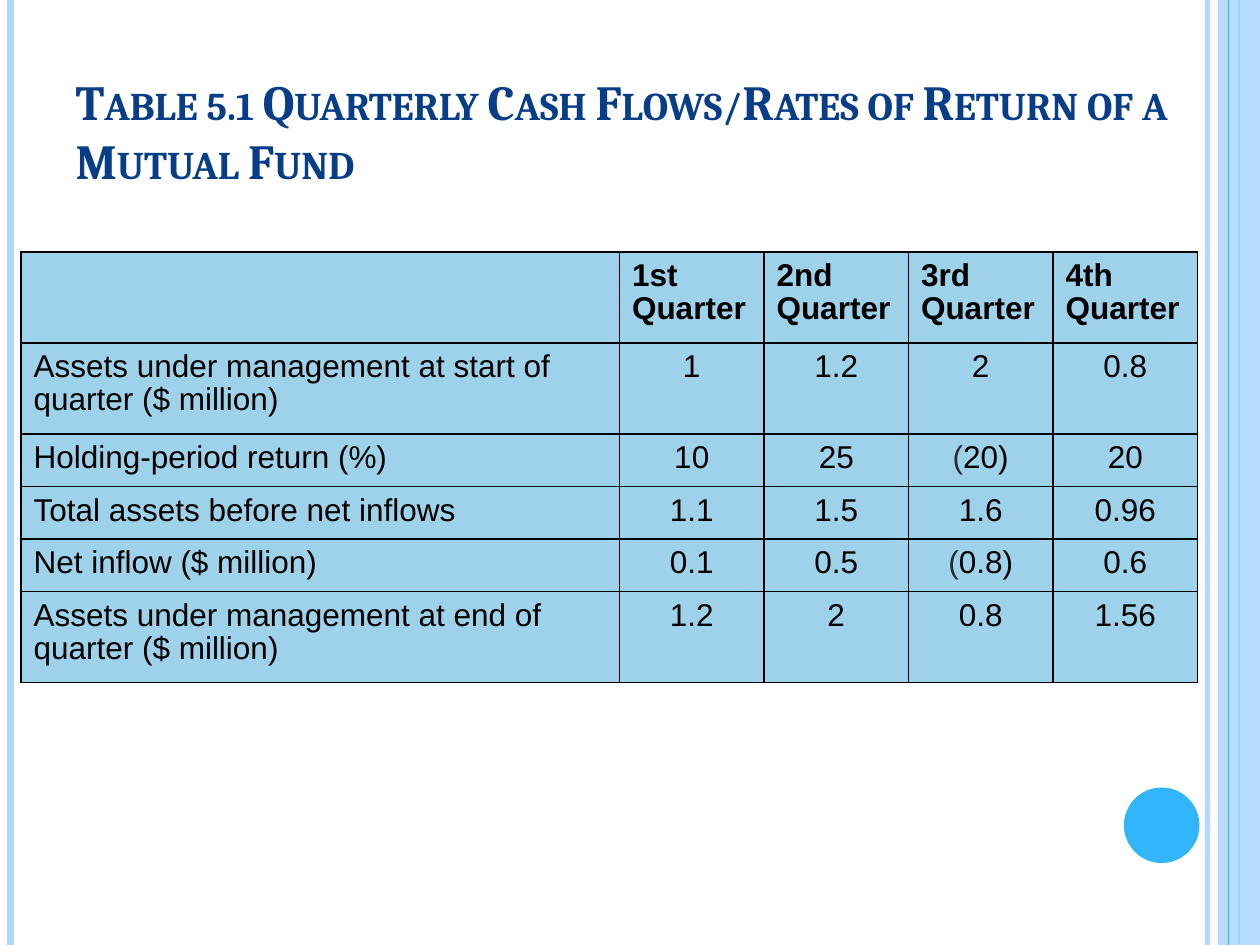
from lxml.etree import SubElement
from pptx import Presentation
from pptx.dml.color import RGBColor
from pptx.enum.shapes import MSO_CONNECTOR, MSO_SHAPE
from pptx.enum.text import MSO_ANCHOR, PP_ALIGN
from pptx.oxml.ns import qn
from pptx.util import Pt

COLORS = {
    "pale": "AED7FE",
    "accent": "31B6FD",
    "title": "073E87",
    "cell": "9ED1EA",
    "ink": "000000",
    "bracket": "292934",
}
SLIDE_WIDTH, SLIDE_HEIGHT = 720, 540

TITLE = "Table 5.1 Quarterly Cash Flows/Rates of Return of a Mutual Fund"
ROWS = [
    ["", "1st Quarter", "2nd Quarter", "3rd Quarter", "4th Quarter"],
    ["Assets under management at start of quarter ($ million)", "1", "1.2", "2", "0.8"],
    ["Holding-period return (%)", "10", "25", "(20)", "20"],
    ["Total assets before net inflows", "1.1", "1.5", "1.6", "0.96"],
    ["Net inflow ($ million)", "0.1", "0.5", "(0.8)", "0.6"],
    ["Assets under management at end of quarter ($ million)", "1.2", "2", "0.8", "1.56"],
]
COLUMN_WIDTHS = [342] + [82.6] * 4
TALL, SHORT = 52, 30
ROW_HEIGHTS = [TALL, TALL, SHORT, SHORT, SHORT, TALL]


def rgb(name):
    return RGBColor.from_string(COLORS[name])


def set_alpha(fill_parent, percent):
    color = fill_parent.find(".//" + qn("a:srgbClr"))
    SubElement(color, qn("a:alpha"), val=str(percent * 1000))


def add_stripe(slide, x, width, color, alpha=100):
    """Draw a vertical line over the full slide height."""
    stripe = slide.shapes.add_connector(
        MSO_CONNECTOR.STRAIGHT, Pt(x), Pt(0), Pt(x), Pt(SLIDE_HEIGHT))
    stripe.line.color.rgb = rgb(color)
    stripe.line.width = Pt(width)
    properties = stripe._element.spPr
    SubElement(properties, qn("a:effectLst"))
    if alpha < 100:
        set_alpha(properties, alpha)


def add_plain_shape(slide, kind, left, top, width, height, color, alpha=100):
    shape = slide.shapes.add_shape(kind, Pt(left), Pt(top), Pt(width), Pt(height))
    shape.shadow.inherit = False
    shape.fill.solid()
    shape.fill.fore_color.rgb = rgb(color)
    shape.line.fill.background()
    if alpha < 100:
        set_alpha(shape._element.spPr, alpha)


def format_font(font, name, size, color, bold):
    font.name = name
    font.size = Pt(size)
    font.color.rgb = rgb(color)
    font.bold = bold


def fill_title(slide):
    title = slide.shapes.title
    title.left, title.top, title.width, title.height = Pt(36), Pt(21.6), Pt(684), Pt(90)
    frame = title.text_frame
    frame.text = TITLE
    frame.word_wrap = True
    frame.vertical_anchor = MSO_ANCHOR.BOTTOM
    heading = frame.paragraphs[0]
    heading.alignment = PP_ALIGN.LEFT
    format_font(heading.font, "Cambria", 28, "title", True)
    heading._p.pPr.find(qn("a:defRPr")).set("cap", "small")


def add_borders(cell):
    properties = cell._tc.get_or_add_tcPr()
    for side in ("lnL", "lnR", "lnT", "lnB"):
        border = SubElement(properties, qn(f"a:{side}"), w=str(Pt(1)))
        fill = SubElement(border, qn("a:solidFill"))
        SubElement(fill, qn("a:srgbClr"), val=COLORS["ink"])


def fill_cell(cell, text, is_header, is_value):
    add_borders(cell)
    cell.fill.solid()
    cell.fill.fore_color.rgb = rgb("cell")
    cell.margin_left = cell.margin_right = Pt(7.2)
    cell.margin_top, cell.margin_bottom = Pt(5), Pt(3.6)
    entry = cell.text_frame.paragraphs[0]
    entry.line_spacing = 0.93
    entry.alignment = PP_ALIGN.CENTER if is_value else PP_ALIGN.LEFT
    format_font(entry.font, "Arial", 18, "ink", is_header)
    if text.startswith("("):
        bracket = entry.add_run()
        bracket.text = "("
        bracket.font.color.rgb = rgb("bracket")
        text = text[1:]
    if text:
        entry.add_run().text = text


def add_cash_flow_table(slide):
    table = slide.shapes.add_table(
        len(ROWS), len(COLUMN_WIDTHS), Pt(12), Pt(144),
        Pt(sum(COLUMN_WIDTHS)), Pt(sum(ROW_HEIGHTS))).table
    table.first_row = table.horz_banding = False
    for column, width in zip(table.columns, COLUMN_WIDTHS):
        column.width = Pt(width)
    for row, height in zip(table.rows, ROW_HEIGHTS):
        row.height = Pt(height)
    for r, texts in enumerate(ROWS):
        for c, text in enumerate(texts):
            fill_cell(table.cell(r, c), text, r == 0, r > 0 and c > 0)


def main():
    presentation = Presentation()
    presentation.slide_width, presentation.slide_height = Pt(SLIDE_WIDTH), Pt(SLIDE_HEIGHT)
    slide = presentation.slides.add_slide(presentation.slide_layouts[5])

    add_stripe(slide, 690, 3, "pale", 93)
    add_stripe(slide, 6, 4.5, "pale")
    add_stripe(slide, 708, 1.5, "accent")
    add_plain_shape(slide, MSO_SHAPE.RECTANGLE, 696, 0, 24, SLIDE_HEIGHT, "pale", 87)
    add_stripe(slide, 702, 0.75, "accent")
    add_plain_shape(slide, MSO_SHAPE.OVAL, 642.24, 450, 43.2, 43.2, "accent")
    fill_title(slide)
    add_cash_flow_table(slide)

    presentation.save("out.pptx")


if __name__ == "__main__":
    main()
